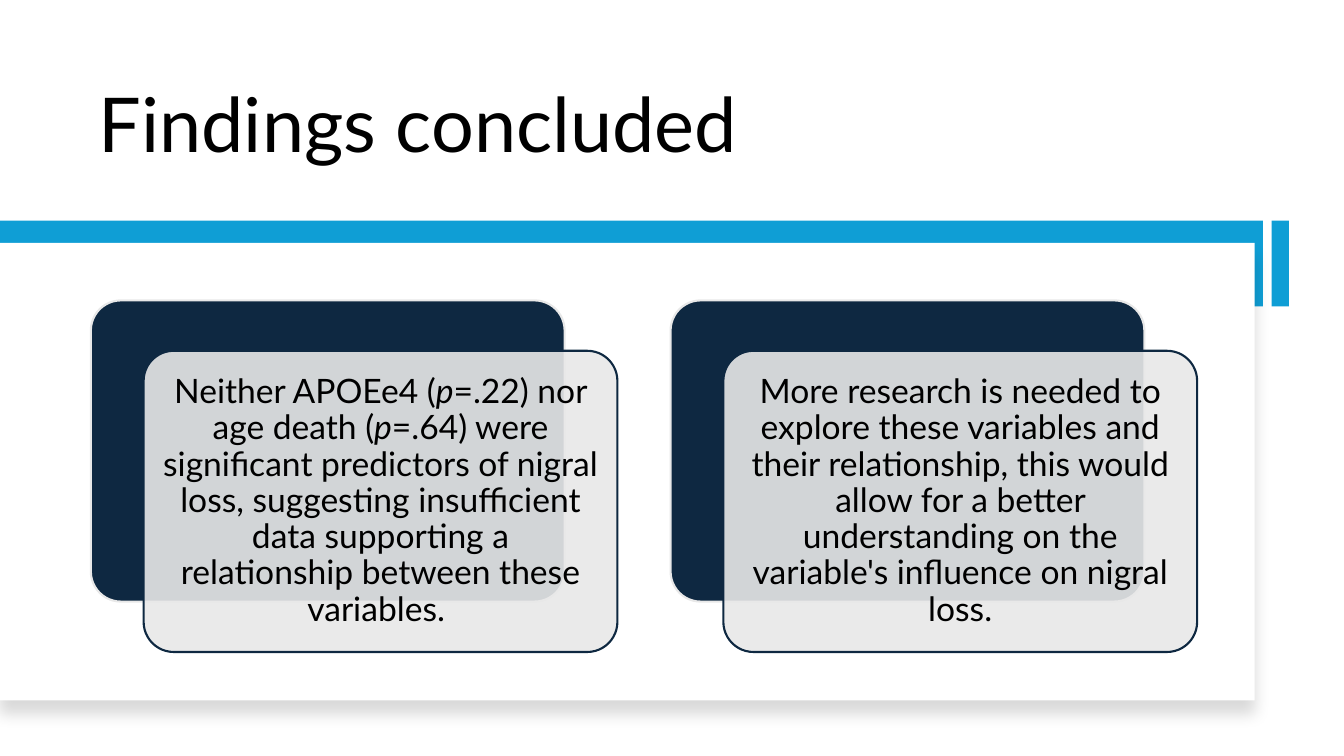
from lxml.etree import SubElement
from pptx import Presentation
from pptx.dml.color import RGBColor
from pptx.enum.shapes import MSO_SHAPE
from pptx.enum.text import MSO_ANCHOR, PP_ALIGN
from pptx.oxml.ns import qn
from pptx.util import Cm, Pt

TITLE = "Findings concluded"
# Each finding is a list of (text, italic) runs
FINDINGS = [
    [
        ("Neither APOEe4 (", False),
        ("p", True),
        ("=.22) nor age death (", False),
        ("p", True),
        ("=.64) were significant predictors of nigral loss, suggesting "
         "insufficient data supporting a relationship between these variables. ", False),
    ],
    [
        ("More research is needed to explore these variables and their "
         "relationship, this would allow for a better understanding on the "
         "variable's influence on nigral loss.", False),
    ],
]

FONT = "Lato"
BLACK, WHITE, BLUE, NAVY, GREY = "000000", "FFFFFF", "0F9ED5", "0E2841", "E8E8E8"

BAND_TOP, BAND_HEIGHT = 5.56, 2.16
CARD_LEFT, CARD_TOP = 2.29, 7.57
CARD_WIDTH, CARD_HEIGHT = 11.94, 7.59
CARD_PITCH = 14.61
FRONT_SHIFT_X, FRONT_SHIFT_Y = 1.33, 1.27


def color(hex_code):
    return RGBColor.from_string(hex_code)


def add_box(left, top, width, height, fill, line=None, kind=MSO_SHAPE.RECTANGLE):
    box = slide.shapes.add_shape(kind, Cm(left), Cm(top), Cm(width), Cm(height))
    box.shadow.inherit = False
    box.fill.solid()
    box.fill.fore_color.rgb = color(fill)
    if line:
        box.line.color.rgb = color(line)
        box.line.width = Pt(1.5)
    else:
        box.line.fill.background()
    return box


def add_card(left, top, fill, line):
    card = add_box(left, top, CARD_WIDTH, CARD_HEIGHT, fill, line,
                   MSO_SHAPE.ROUNDED_RECTANGLE)
    card.adjustments[0] = 0.1
    return card


def set_alpha(color_element, percent):
    SubElement(color_element, qn("a:alpha"), val=str(percent * 1000))


def add_soft_shadow(box):
    """Cast a faint black shadow straight down."""
    effects = box._element.spPr.find(qn("a:effectLst"))
    shadow = SubElement(effects, qn("a:outerShdw"), blurRad=str(Pt(11)),
                        dist=str(Pt(10)), dir="5400000", algn="t", rotWithShape="0")
    set_alpha(SubElement(shadow, qn("a:srgbClr"), val=BLACK), 15)


def write(frame, runs, size, anchor, align):
    frame.word_wrap = True
    frame.vertical_anchor = anchor
    paragraph = frame.paragraphs[0]
    paragraph.alignment = align
    paragraph.line_spacing = 0.9
    for text, italic in runs:
        run = paragraph.add_run()
        run.text = text
        run.font.name = FONT
        run.font.size = Pt(size)
        run.font.italic = italic
        run.font.color.rgb = color(BLACK)


presentation = Presentation()
presentation.slide_width, presentation.slide_height = Cm(33.87), Cm(19.05)
slide = presentation.slides.add_slide(presentation.slide_layouts[6])

title = slide.shapes.add_textbox(Cm(2.24), Cm(1.07), Cm(25.65), Cm(3.3))
write(title.text_frame, [(TITLE, False)], 54, MSO_ANCHOR.BOTTOM, PP_ALIGN.LEFT)

add_box(32.05, BAND_TOP, 0.43, BAND_HEIGHT, BLUE)
add_box(0, BAND_TOP, 31.83, BAND_HEIGHT, BLUE)
add_soft_shadow(add_box(0, 6.12, 31.62, 11.53, WHITE))

for index, finding in enumerate(FINDINGS):
    left = CARD_LEFT + index * CARD_PITCH
    add_card(left, CARD_TOP, NAVY, GREY)
    front = add_card(left + FRONT_SHIFT_X, CARD_TOP + FRONT_SHIFT_Y, GREY, NAVY)
    set_alpha(front.fill._xPr.find(qn("a:solidFill"))[0], 90)
    frame = front.text_frame
    frame.margin_left = frame.margin_right = Cm(0.25)
    frame.margin_top = frame.margin_bottom = Cm(0.25)
    write(frame, finding, 24, MSO_ANCHOR.MIDDLE, PP_ALIGN.CENTER)

presentation.save("out.pptx")
